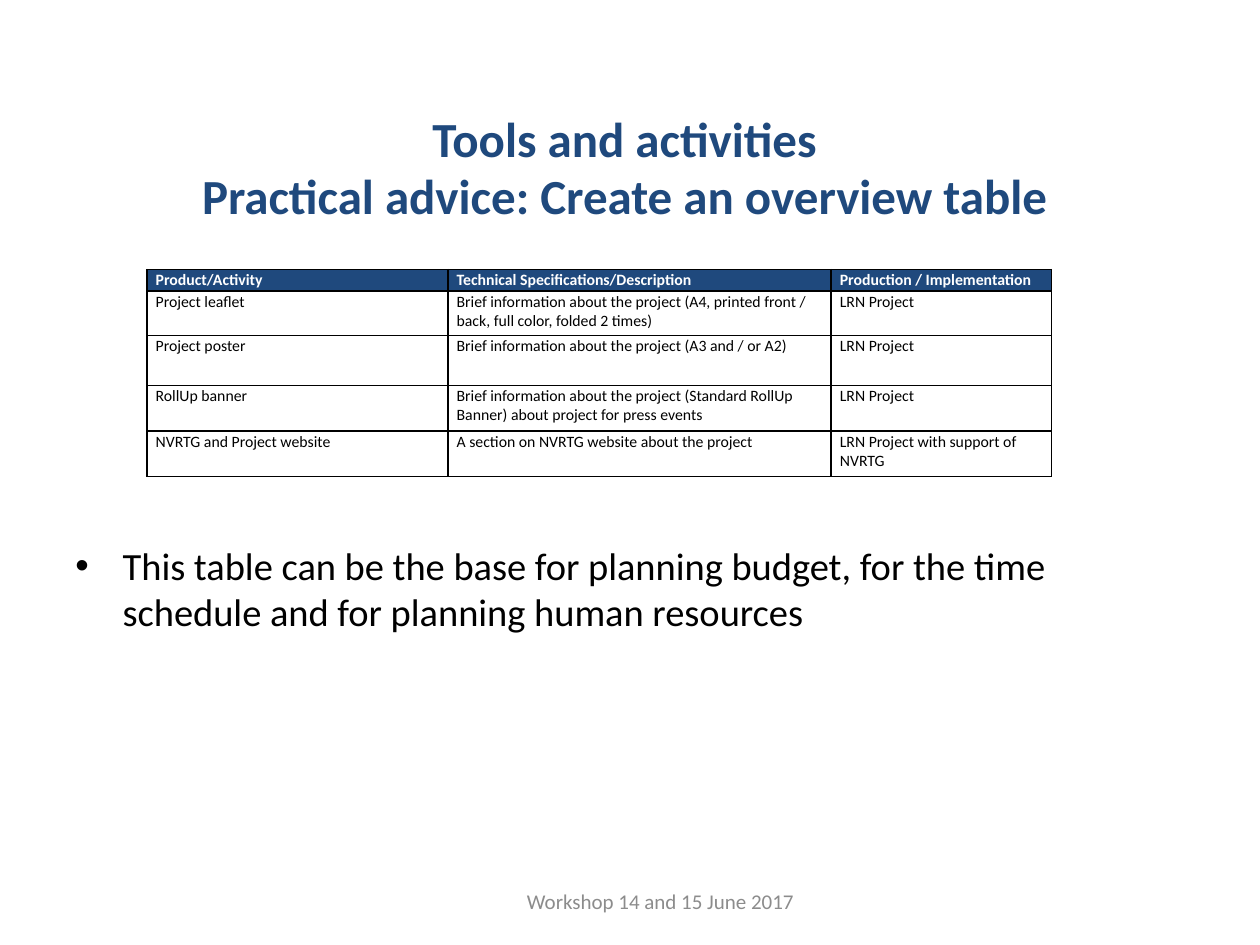
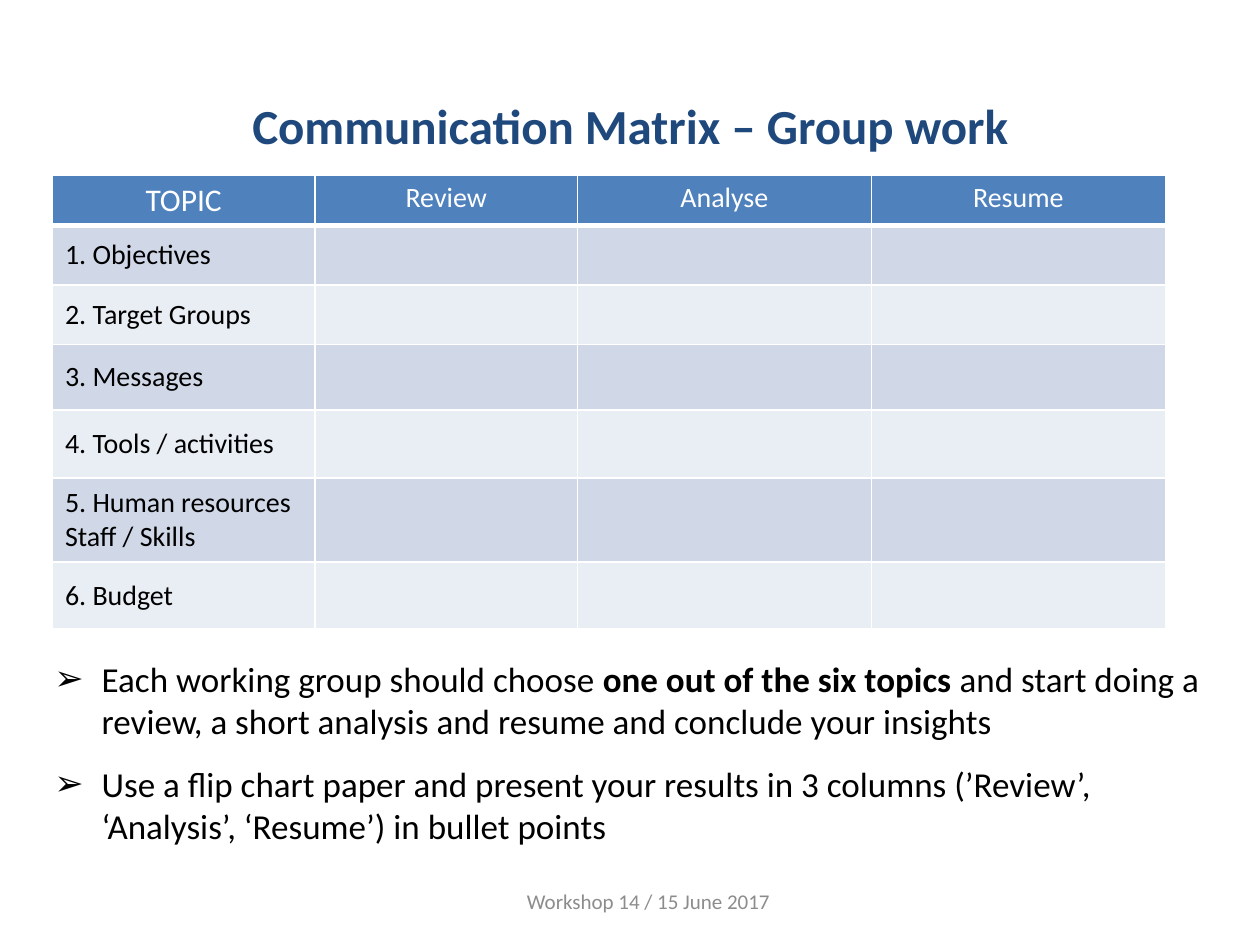
"""Build two workshop slides: an overview table and a communication matrix."""
from lxml import etree
from pptx import Presentation
from pptx.dml.color import RGBColor
from pptx.enum import text
from pptx.oxml import ns
from pptx.util import Pt

FONT = "Calibri"
NAVY, BLUE, BLACK, WHITE, GREY = "1F497D", "4F81BD", "000000", "FFFFFF", "8C8C8C"
BANDS = ("D0D8E8", "E9EDF4")
MIDDLE, TOP = text.MSO_ANCHOR.MIDDLE, text.MSO_ANCHOR.TOP
CENTER, LEFT = text.PP_ALIGN.CENTER, text.PP_ALIGN.LEFT

OVERVIEW = {
    "title": ["Tools and activities ", "Practical advice: Create an overview table "],
    "title_box": (36, 63, 648, 67),
    "footer": "Workshop 14 and 15 June 2017",
    "bullets": [
        ("•", 22, (36, 306, 648, 78), [
            ("This table can be the base for planning budget, for the time schedule "
             "and for planning human resources", False)]),
    ],
}
OVERVIEW_ROWS = [
    ("Product/Activity", "Technical Specifications/Description", "Production / Implementation"),
    ("Project leaflet",
     "Brief information about the project (A4, printed front / back, full color, folded 2 times)",
     "LRN Project"),
    ("Project poster", "Brief information about the project (A3 and / or A2)", "LRN Project"),
    ("RollUp banner",
     "Brief information about the project (Standard RollUp Banner) about project for press events",
     "LRN Project"),
    ("NVRTG and Project website", "A section on NVRTG website about the project",
     "LRN Project with support of NVRTG"),
]

MATRIX = {
    "title": ["Communication Matrix – Group work"],
    "title_box": (36, 54, 648, 37.5),
    "footer": "Workshop 14 / 15 June 2017",
    "bullets": [
        ("➢", 20, (24, 372, 672, 54), [
            ("Each working group should choose ", False),
            ("one out of the six topics ", True),
            ("and start doing a review, a short analysis and resume "
             "and conclude your insights", False)]),
        ("➢", 20, (24, 432, 672, 54), [
            ("Use a flip chart paper and present your results in 3 columns "
             "(’Review’, ‘Analysis’, ‘Resume’) in bullet points", False)]),
    ],
}
MATRIX_HEADER = ("TOPIC", "Review", "Analyse", "Resume")
MATRIX_TOPICS = ["1. Objectives", "2. Target Groups", "3. Messages", "4. Tools / activities",
                 "5. Human resources\nStaff / Skills", "6. Budget"]


def rgb(value):
    """Turn a hex string into a colour."""
    return RGBColor.from_string(value)


def add_run(paragraph, content, size, color, bold=False):
    """Append one formatted run."""
    run = paragraph.add_run()
    run.text = content
    run.font.name, run.font.size, run.font.bold = FONT, Pt(size), bold
    run.font.color.rgb = rgb(color)


def add_box(slide, box, anchor):
    """Add a wrapping text box and return its first paragraph."""
    frame = slide.shapes.add_textbox(*map(Pt, box)).text_frame
    frame.word_wrap, frame.vertical_anchor = True, anchor
    return frame.paragraphs[0]


def add_bullet(slide, character, size, box, runs):
    """Add a text box holding one bulleted paragraph."""
    paragraph = add_box(slide, box, TOP)
    properties = paragraph._p.get_or_add_pPr()
    properties.set("marL", str(Pt(27)))
    properties.set("indent", str(-Pt(27)))
    etree.SubElement(properties, ns.qn("a:buFont")).set("typeface", "Arial")
    etree.SubElement(properties, ns.qn("a:buChar")).set("char", character)
    for content, bold in runs:
        add_run(paragraph, content, size, BLACK, bold)


def add_slide(presentation, content):
    """Add a slide with its title, bullets and footer."""
    slide = presentation.slides.add_slide(presentation.slide_layouts[5])
    title = slide.shapes.title
    title.left, title.top, title.width, title.height = map(Pt, content["title_box"])
    frame = title.text_frame
    frame.word_wrap, frame.vertical_anchor = True, MIDDLE
    frame.auto_size = text.MSO_AUTO_SIZE.NONE
    paragraph = frame.paragraphs[0]
    paragraph.alignment, paragraph.line_spacing = CENTER, 0.97
    for index, line in enumerate(content["title"]):
        if index:
            paragraph.add_line_break()
        add_run(paragraph, line, 28, NAVY, True)
    for bullet in content["bullets"]:
        add_bullet(slide, *bullet)
    footer = add_box(slide, (294, 500.5, 168, 28.5), MIDDLE)
    add_run(footer, content["footer"], 12, GREY)
    return slide


def add_grid(slide, left, top, widths, heights):
    """Add a table with the given column widths and row heights."""
    table = slide.shapes.add_table(len(heights), len(widths), Pt(left), Pt(top),
                                   Pt(sum(widths)), Pt(sum(heights))).table
    for column, width in zip(table.columns, widths):
        column.width = Pt(width)
    for row, height in zip(table.rows, heights):
        row.height = Pt(height)
    return table


def style_cell(cell, fill, border, bottom=1):
    """Set the fill and the four border lines of a cell."""
    if fill:
        cell.fill.solid()
        cell.fill.fore_color.rgb = rgb(fill)
    else:
        cell.fill.background()
    properties = cell._tc.get_or_add_tcPr()
    for index, side in enumerate("LRTB"):
        line = etree.Element(ns.qn(f"a:ln{side}"), w=str(Pt(bottom if side == "B" else 1)))
        solid = etree.SubElement(line, ns.qn("a:solidFill"))
        etree.SubElement(solid, ns.qn("a:srgbClr")).set("val", border)
        properties.insert(index, line)


def write_cell(cell, content, size, color, bold=False, align=LEFT):
    """Write one paragraph per line of content."""
    frame = cell.text_frame
    for index, line in enumerate(content.split("\n")):
        paragraph = frame.add_paragraph() if index else frame.paragraphs[0]
        paragraph.alignment = align
        add_run(paragraph, line, size, color, bold)


def build_overview(presentation):
    """Build the overview table slide."""
    slide = add_slide(presentation, OVERVIEW)
    table = add_grid(slide, 84, 154, (172, 219, 126), (12.4, 25.2, 28.8, 25.9, 25.9))
    for row, contents in enumerate(OVERVIEW_ROWS):
        header = row == 0
        for column, content in enumerate(contents):
            cell = table.cell(row, column)
            cell.margin_left = cell.margin_right = Pt(5)
            cell.margin_top, cell.margin_bottom = Pt(0.7), Pt(0)
            style_cell(cell, NAVY if header else None, BLACK)
            write_cell(cell, content, 9, WHITE if header else BLACK, header)


def build_matrix(presentation):
    """Build the communication matrix slide."""
    slide = add_slide(presentation, MATRIX)
    table = add_grid(slide, 30, 100, (150, 150, 168, 168),
                     (28.8, 34, 34, 37.4, 38.9, 48.2, 38.2))
    for column, heading in enumerate(MATRIX_HEADER):
        cell = table.cell(0, column)
        style_cell(cell, BLUE, WHITE, 3)
        write_cell(cell, heading, 16 if column else 18, WHITE, align=CENTER)
        for row, topic in enumerate(MATRIX_TOPICS):
            cell = table.cell(row + 1, column)
            style_cell(cell, BANDS[row % 2], WHITE)
            if column == 0:
                cell.vertical_anchor = MIDDLE
                write_cell(cell, topic, 16, BLACK)


def main():
    """Build and save the presentation."""
    presentation = Presentation()
    presentation.slide_width, presentation.slide_height = Pt(720), Pt(540)
    build_overview(presentation)
    build_matrix(presentation)
    presentation.save("out.pptx")


if __name__ == "__main__":
    main()
